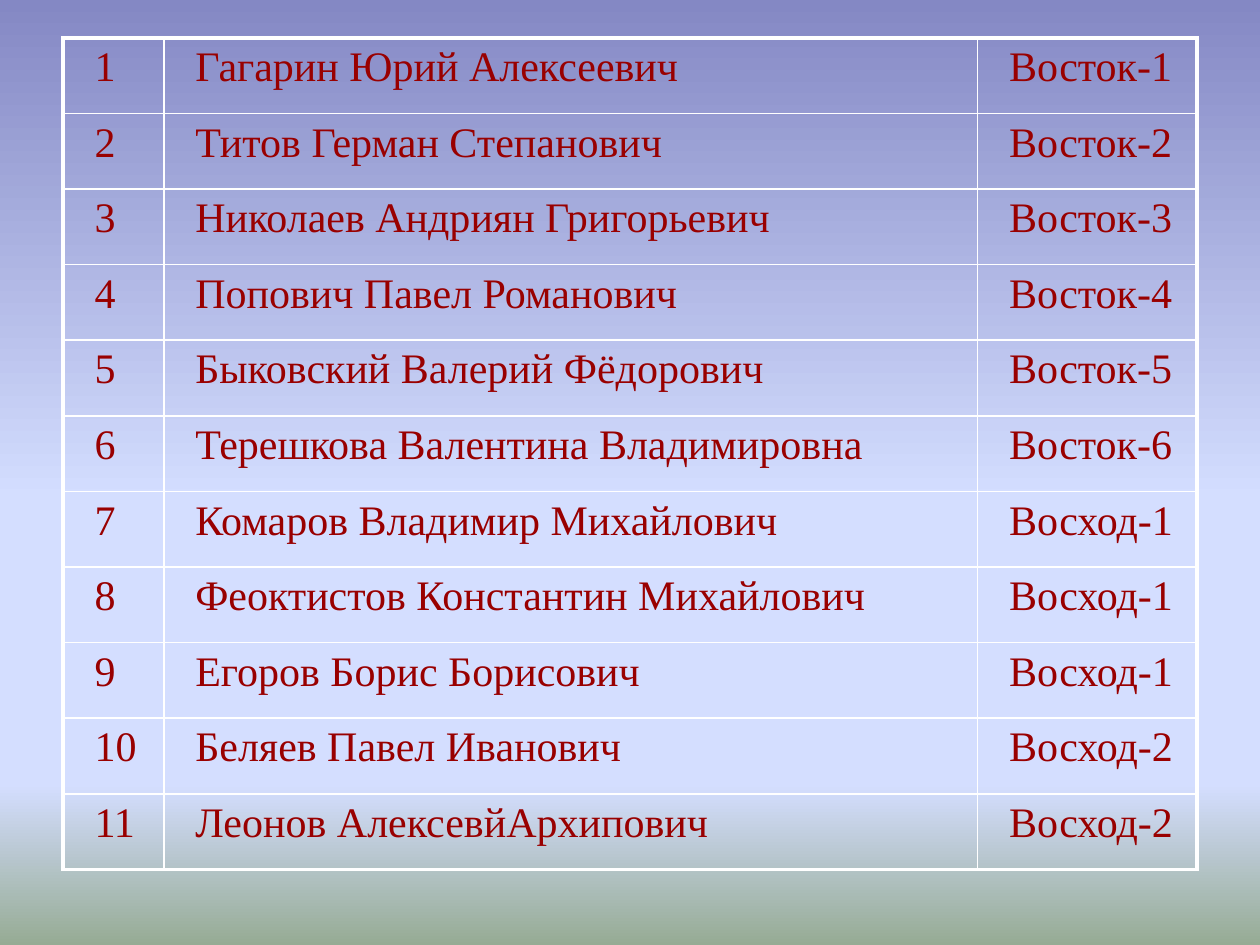
from typing import NamedTuple

from lxml.etree import SubElement as Sub
from pptx import Presentation
from pptx.dml.color import RGBColor as RGB
from pptx.oxml.ns import qn
from pptx.util import Inches, Pt

COLORS = {
    "dusk": "8488C4",
    "sky": "D4DEFF",
    "earth": "96AB94",
    "text": "990000",
    "line": "FFFFFF",
}
STOPS = [(0, "dusk"), (53, "sky"), (83, "sky"), (100, "earth")]
WIDTHS = [0.8, 6.46, 1.74]
ROW = 0.6
THIN, THICK = 1, 2.25


class Flight(NamedTuple):
    name: str
    ship: str


FLIGHTS = [
    Flight("Гагарин Юрий Алексеевич", "Восток-1"),
    Flight("Титов Герман Степанович", "Восток-2"),
    Flight("Николаев Андриян Григорьевич", "Восток-3"),
    Flight("Попович Павел Романович", "Восток-4"),
    Flight("Быковский Валерий Фёдорович", "Восток-5"),
    Flight("Терешкова Валентина Владимировна", "Восток-6"),
    Flight("Комаров Владимир Михайлович", "Восход-1"),
    Flight("Феоктистов Константин Михайлович", "Восход-1"),
    Flight("Егоров Борис Борисович", "Восход-1"),
    Flight("Беляев Павел Иванович", "Восход-2"),
    Flight("Леонов АлексевйАрхипович", "Восход-2"),
]


def add_color(parent, key: str) -> None:
    Sub(parent, qn("a:srgbClr"), val=COLORS[key])


def paint_sky(slide) -> None:
    fill = slide.background.fill
    fill.gradient()
    fill.gradient_angle = 270
    stops = next(slide.element.iter(qn("a:gsLst")))
    for old in list(stops):
        stops.remove(old)
    for place, key in STOPS:
        add_color(Sub(stops, qn("a:gs"), pos=str(place * 1000)), key)


def set_border(cell, side: str, width: float) -> None:
    props = cell._tc.get_or_add_tcPr()
    line = Sub(props, qn(f"a:ln{side}"), w=str(Pt(width)))
    add_color(Sub(line, qn("a:solidFill")), "line")


def fill_cell(cell, text: str, edges: dict[str, bool]) -> None:
    for side, outer in edges.items():
        set_border(cell, side, THICK if outer else THIN)
    cell.fill.background()
    cell.text_frame.text = text
    para = cell.text_frame.paragraphs[0]
    props = para._p.get_or_add_pPr()
    props.set("marL", str(Inches(0.15)))
    props.set("indent", "0")
    Sub(props, qn("a:buNone"))
    font = para.runs[0].font
    font.name, font.size = "Times New Roman", Pt(24)
    font.color.rgb = RGB.from_string(COLORS["text"])


def add_list(slide, flights: list[Flight]) -> None:
    rows, cols = len(flights), len(WIDTHS)
    table = slide.shapes.add_table(
        rows, cols, Inches(0.5), Inches(0.3),
        Inches(sum(WIDTHS)), Inches(ROW * rows),
    ).table
    table.first_row = table.horz_banding = False
    for col, width in zip(table.columns, WIDTHS):
        col.width = Inches(width)
    for r, flight in enumerate(flights):
        table.rows[r].height = Inches(ROW)
        for c, text in enumerate((str(r + 1), *flight)):
            edges = {"L": c == 0, "R": c == cols - 1,
                     "T": r == 0, "B": r == rows - 1}
            fill_cell(table.cell(r, c), text, edges)


def main() -> None:
    deck = Presentation()
    deck.slide_width, deck.slide_height = Inches(10), Inches(7.5)
    # Blank layout: the slide has no title
    slide = deck.slides.add_slide(deck.slide_layouts[6])
    # Background
    paint_sky(slide)
    # Table of cosmonauts and ships
    add_list(slide, FLIGHTS)
    deck.save("out.pptx")


if __name__ == "__main__":
    main()
